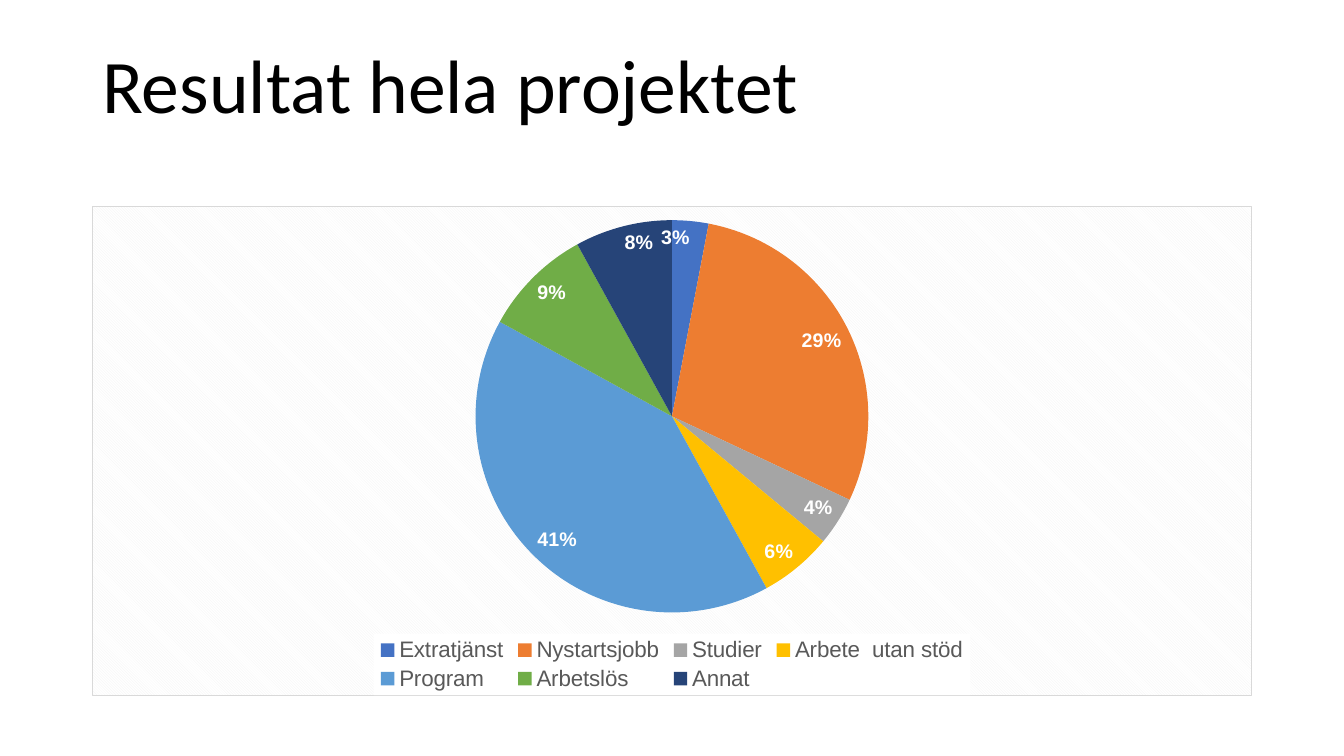
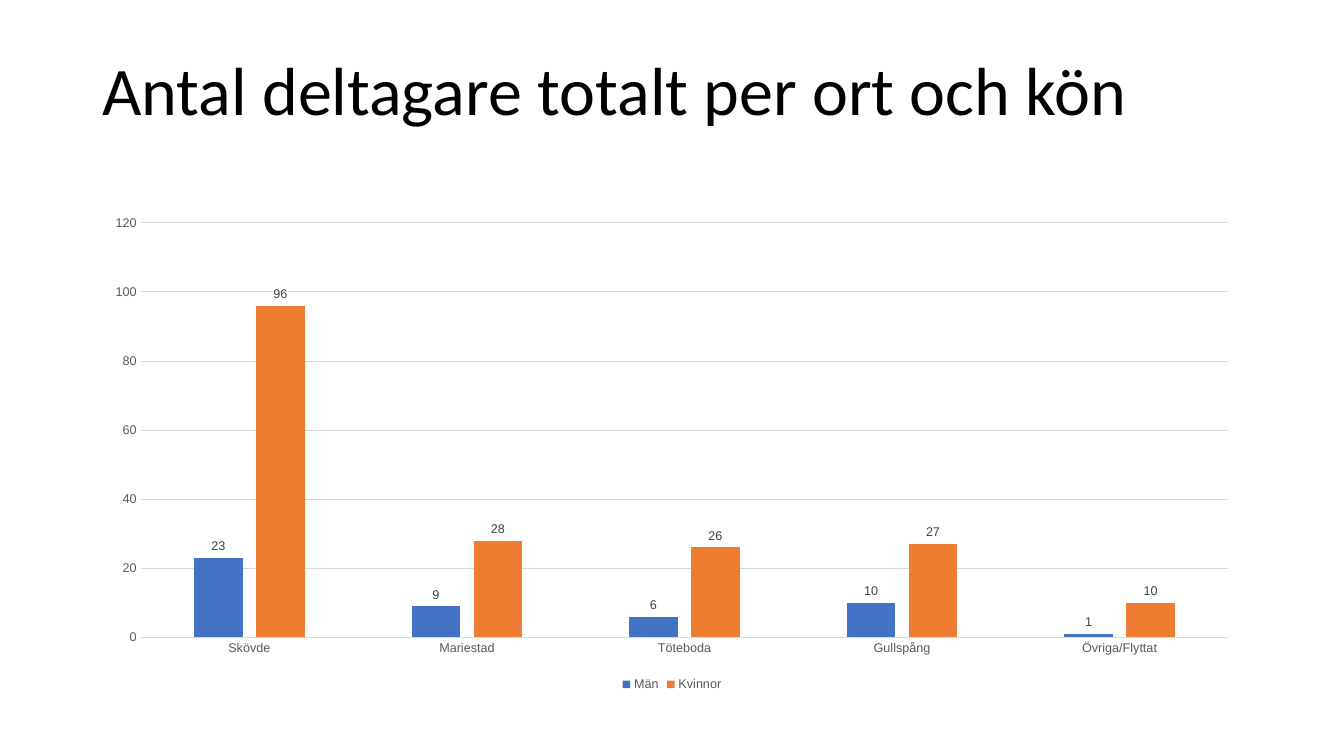
from lxml import etree
from pptx import Presentation
from pptx.chart.data import CategoryChartData
from pptx.dml.color import RGBColor
from pptx.enum import chart as ch, text
from pptx.oxml.ns import qn
from pptx.util import Pt

W, H = 960, 540
TITLE_BOX = (66, 23, 828, 73.5)
CHART_BOX = (66, 147, 828, 350)
BLACK, WHITE, GRAY, DARK, RULE, HATCH = "000000", "FFFFFF", "595959", "404040", "D9D9D9", "F2F2F2"
ACCENTS = ["4472C4", "ED7D31", "A5A5A5", "FFC000", "5B9BD5", "70AD47", "264478"]
NS = ('xmlns:c="http://schemas.openxmlformats.org/drawingml/2006/chart" '
      'xmlns:a="http://schemas.openxmlformats.org/drawingml/2006/main"')


def rgb(color):
    """Return the colour for a hex string."""
    return RGBColor.from_string(color)


def set_font(font, size, color, name="Arial", bold=False):
    """Set size, colour, face and weight of a font."""
    font.size, font.name, font.bold = Pt(size), name, bold
    font.color.rgb = rgb(color)


def set_line(line, color):
    """Give a line the thin rule style."""
    line.color.rgb = rgb(color)
    line.width = Pt(0.75)


def solid(color):
    """Return the XML of a solid fill."""
    return f'<a:solidFill><a:srgbClr val="{color}"/></a:solidFill>'


def area_format(content):
    """Return a chart shape-properties element around fill and line XML."""
    return etree.fromstring(f"<c:spPr {NS}>{content}</c:spPr>")


def add_title(s, box, title, size):
    """Place a slide title in the box."""
    tf = s.shapes.add_textbox(*map(Pt, box)).text_frame
    tf.word_wrap = True
    tf.vertical_anchor = text.MSO_ANCHOR.BOTTOM
    p = tf.paragraphs[0]
    p.text = title
    p.line_spacing = 0.9
    set_font(p.runs[0].font, size, BLACK, "Calibri")


def add_chart(s, box, kind, categories, series, legend_size):
    """Place a chart with a bottom legend in the box."""
    data = CategoryChartData()
    data.categories = categories
    for name, values in series:
        data.add_series(name, values)
    chart = s.shapes.add_chart(kind, *map(Pt, box), data).chart
    set_font(chart.font, 10, BLACK)
    chart.has_title = False
    chart.has_legend = True
    chart.legend.position = ch.XL_LEGEND_POSITION.BOTTOM
    chart.legend.include_in_layout = False
    set_font(chart.legend.font, legend_size, GRAY)
    return chart


def add_pie(s, box, categories, values):
    """Place a pie chart on a hatched, bordered area."""
    chart = add_chart(s, box, ch.XL_CHART_TYPE.PIE, categories, [("Series 1", values)], 16)
    plot = chart.plots[0]
    plot.vary_by_categories = True
    for i, color in enumerate(ACCENTS):
        fill = plot.series[0].points[i].format.fill
        fill.solid()
        fill.fore_color.rgb = rgb(color)
    plot.has_data_labels = True
    labels = plot.data_labels
    labels.show_percentage, labels.show_value = True, False
    labels.number_format, labels.number_format_is_linked = "0%", False
    labels.position = ch.XL_LABEL_POSITION.INSIDE_END
    set_font(labels.font, 14, WHITE, bold=True)

    space = chart.element
    space.find(qn("c:chart")).addnext(area_format(
        f'<a:pattFill prst="dkDnDiag"><a:fgClr><a:srgbClr val="{HATCH}"/></a:fgClr>'
        f'<a:bgClr><a:srgbClr val="{WHITE}"/></a:bgClr></a:pattFill>'
        f'<a:ln w="{Pt(0.75)}">{solid(RULE)}</a:ln>'))
    legend = space.find(qn("c:chart")).find(qn("c:legend"))
    legend.find(qn("c:txPr")).addprevious(area_format(solid(WHITE) + "<a:ln><a:noFill/></a:ln>"))


def add_columns(s, box, categories, series):
    """Place a clustered column chart with value labels."""
    chart = add_chart(s, box, ch.XL_CHART_TYPE.COLUMN_CLUSTERED, categories, series, 9)
    plot = chart.plots[0]
    plot.vary_by_categories = False
    plot.gap_width, plot.overlap = 219, -27
    for ser, color in zip(plot.series, ACCENTS):
        ser.format.fill.solid()
        ser.format.fill.fore_color.rgb = rgb(color)
        ser.invert_if_negative = False
        labels = ser.data_labels
        labels.show_value = True
        labels.position = ch.XL_LABEL_POSITION.OUTSIDE_END
        set_font(labels.font, 9, DARK)
    for axis in (chart.category_axis, chart.value_axis):
        axis.major_tick_mark = axis.minor_tick_mark = ch.XL_TICK_MARK.NONE
        set_font(axis.tick_labels.font, 9, GRAY)
    set_line(chart.category_axis.format.line, RULE)
    chart.value_axis.format.line.fill.background()
    chart.value_axis.has_major_gridlines = True
    set_line(chart.value_axis.major_gridlines.format.line, RULE)


def add_slide(prs, title, size):
    """Add a blank slide with a title."""
    s = prs.slides.add_slide(prs.slide_layouts[6])
    add_title(s, TITLE_BOX, title, size)
    return s


def main():
    """Build and save the presentation."""
    prs = Presentation()
    prs.slide_width, prs.slide_height = Pt(W), Pt(H)

    s = add_slide(prs, "Resultat hela projektet", 54)
    add_pie(s, CHART_BOX,
            ["Extratjänst", "Nystartsjobb", "Studier", "Arbete  utan stöd",
             "Program", "Arbetslös", "Annat"],
            [3, 29, 4, 6, 41, 9, 8])

    s = add_slide(prs, "Antal deltagare totalt per ort och kön", 48.6)
    add_columns(s, CHART_BOX,
                ["Skövde", "Mariestad", "Töteboda", "Gullspång", "Övriga/Flyttat"],
                [("Män", [23, 9, 6, 10, 1]), ("Kvinnor", [96, 28, 26, 27, 10])])

    prs.save("out.pptx")


if __name__ == "__main__":
    main()
